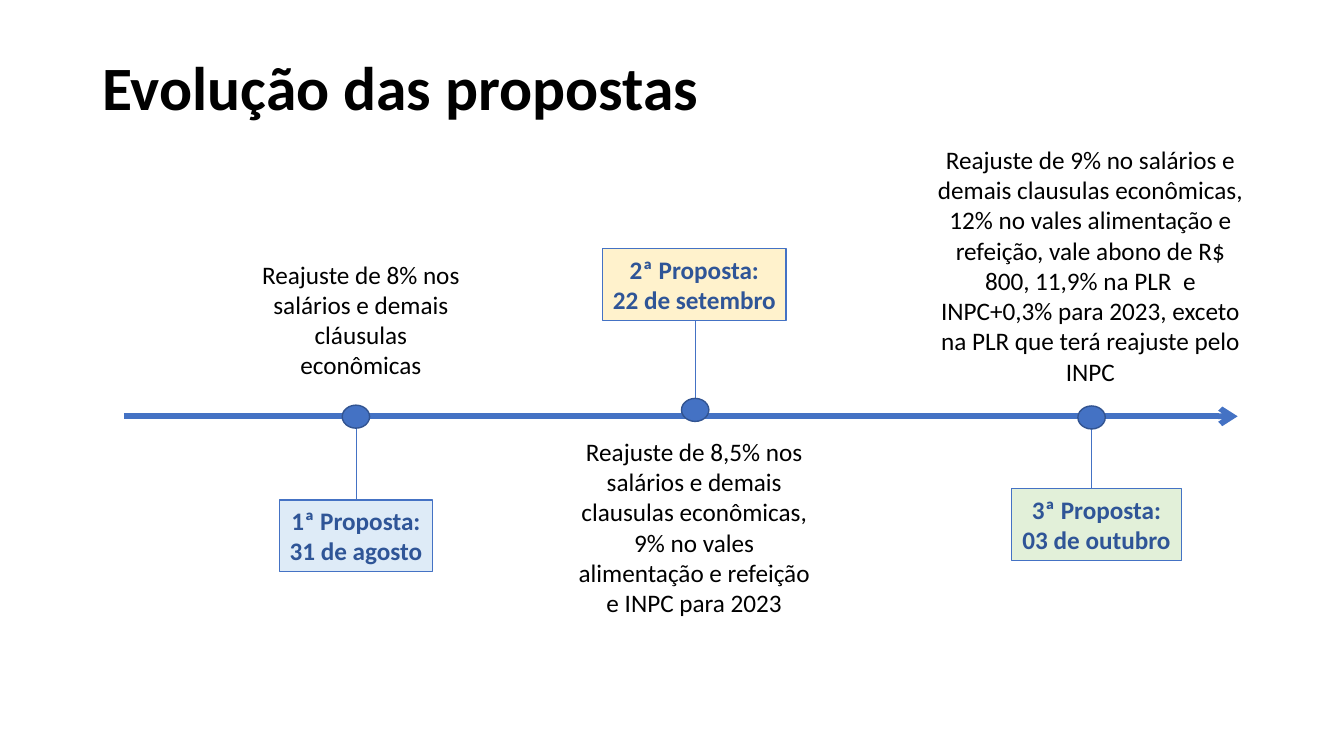
from dataclasses import dataclass

from pptx import Presentation
from pptx.dml.color import RGBColor
from pptx.enum.shapes import MSO_CONNECTOR, MSO_SHAPE
from pptx.enum.text import MSO_ANCHOR, MSO_AUTO_SIZE, PP_ALIGN
from pptx.oxml.ns import qn
from pptx.util import Cm, Pt
from lxml.etree import SubElement

COLORS = {
    "text": "000000",
    "axis": "4472C4",
    "dot_line": "325491",
    "tag_text": "2F5597",
    "blue": "DEEBF7",
    "yellow": "FFF2CC",
    "green": "E2F0D9",
}
FONT = "Calibri"
DOT_WIDTH, DOT_HEIGHT = 0.69, 0.58
TAG_HEIGHT = 1.8
TAG_INSET = 0.2


@dataclass
class Proposal:
    heading: str
    date: str
    details: str
    fill: str
    dot: tuple
    tag: tuple
    details_box: tuple


PROPOSALS = [
    Proposal(
        "1ª Proposta:", "31 de agosto",
        "Reajuste de 8% nos salários e demais cláusulas econômicas",
        "blue", (8.97, 10.5), (7.04, 12.6, 3.86), (6.25, 6.4, 5.69, 4.11),
    ),
    Proposal(
        "2ª Proposta:", "22 de setembro",
        "Reajuste de 8,5% nos salários e demais clausulas econômicas, "
        "9% no vales alimentação e refeição e INPC para 2023",
        "yellow", (17.52, 10.33), (15.19, 6.27, 4.62), (14.22, 10.87, 6.55, 5.64),
    ),
    Proposal(
        "3ª Proposta:", "03 de outubro",
        "Reajuste de 9% no salários e demais clausulas econômicas, "
        "12% no vales alimentação e refeição, vale abono de R$ 800, "
        "11,9% na PLR  e INPC+0,3% para 2023, exceto na PLR que terá "
        "reajuste pelo INPC",
        "green", (27.51, 10.52), (25.5, 12.32, 4.27), (23.29, 3.51, 8.38, 7.19),
    ),
]


def rgb(name):
    return RGBColor.from_string(COLORS[name])


def format_text(text_frame, size, color, bold, alignment):
    for paragraph in text_frame.paragraphs:
        paragraph.alignment = alignment
        for run in paragraph.runs:
            run.font.name = FONT
            run.font.size = Pt(size)
            run.font.bold = bold
            run.font.color.rgb = rgb(color)


def add_line(slide, start, end, width):
    connector = slide.shapes.add_connector(
        MSO_CONNECTOR.STRAIGHT, *map(Cm, start + end))
    connector.line.color.rgb = rgb("axis")
    connector.line.width = Pt(width)
    SubElement(connector._element.spPr, qn("a:effectLst"))
    return connector


def add_filled_shape(slide, kind, box, fill, line, line_width):
    shape = slide.shapes.add_shape(kind, *map(Cm, box))
    shape.shadow.inherit = False
    shape.fill.solid()
    shape.fill.fore_color.rgb = rgb(fill)
    shape.line.color.rgb = rgb(line)
    shape.line.width = Pt(line_width)
    return shape


def add_title(slide, box):
    title = slide.shapes.title
    title.left, title.top, title.width, title.height = map(Cm, box)
    text_frame = title.text_frame
    text_frame.text = "Evolução das propostas"
    text_frame.auto_size = MSO_AUTO_SIZE.NONE
    text_frame.vertical_anchor = MSO_ANCHOR.MIDDLE
    text_frame.paragraphs[0].line_spacing = 0.9
    format_text(text_frame, 44, "text", True, PP_ALIGN.LEFT)


def add_axis(slide, left, top, width):
    axis = add_line(slide, (left, top), (left + width, top), 4)
    SubElement(axis.line._get_or_add_ln(), qn("a:tailEnd"), type="arrow")


def add_tag(slide, proposal, box):
    tag = add_filled_shape(
        slide, MSO_SHAPE.RECTANGLE, box, proposal.fill, "axis", 0.75)
    text_frame = tag.text_frame
    text_frame.text = f"{proposal.heading}\n{proposal.date}"
    text_frame.word_wrap = False
    text_frame.auto_size = MSO_AUTO_SIZE.NONE
    text_frame.margin_left = text_frame.margin_right = Cm(TAG_INSET)
    format_text(text_frame, 18, "tag_text", True, PP_ALIGN.CENTER)


def add_details(slide, details, box):
    text_frame = slide.shapes.add_textbox(*map(Cm, box)).text_frame
    text_frame.text = details
    text_frame.word_wrap = True
    text_frame.auto_size = MSO_AUTO_SIZE.SHAPE_TO_FIT_TEXT
    format_text(text_frame, 18, "text", False, PP_ALIGN.CENTER)


def add_proposal(slide, proposal):
    center_x, center_y = proposal.dot
    tag_left, tag_top, tag_width = proposal.tag
    stem_end = tag_top if tag_top > center_y else tag_top + TAG_HEIGHT
    add_line(slide, (center_x, center_y), (center_x, stem_end), 0.5)
    dot_box = (center_x - DOT_WIDTH / 2, center_y - DOT_HEIGHT / 2,
               DOT_WIDTH, DOT_HEIGHT)
    add_filled_shape(slide, MSO_SHAPE.OVAL, dot_box, "axis", "dot_line", 1)
    add_tag(slide, proposal, (tag_left, tag_top, tag_width, TAG_HEIGHT))
    add_details(slide, proposal.details, proposal.details_box)


def main():
    presentation = Presentation()
    presentation.slide_width = Cm(33.87)
    presentation.slide_height = Cm(19.05)
    slide = presentation.slides.add_slide(presentation.slide_layouts[5])
    add_title(slide, (2.33, 1.01, 29.21, 2.54))
    add_axis(slide, 3.12, 10.49, 28.07)
    for proposal in PROPOSALS:
        add_proposal(slide, proposal)
    presentation.save("out.pptx")


if __name__ == "__main__":
    main()
